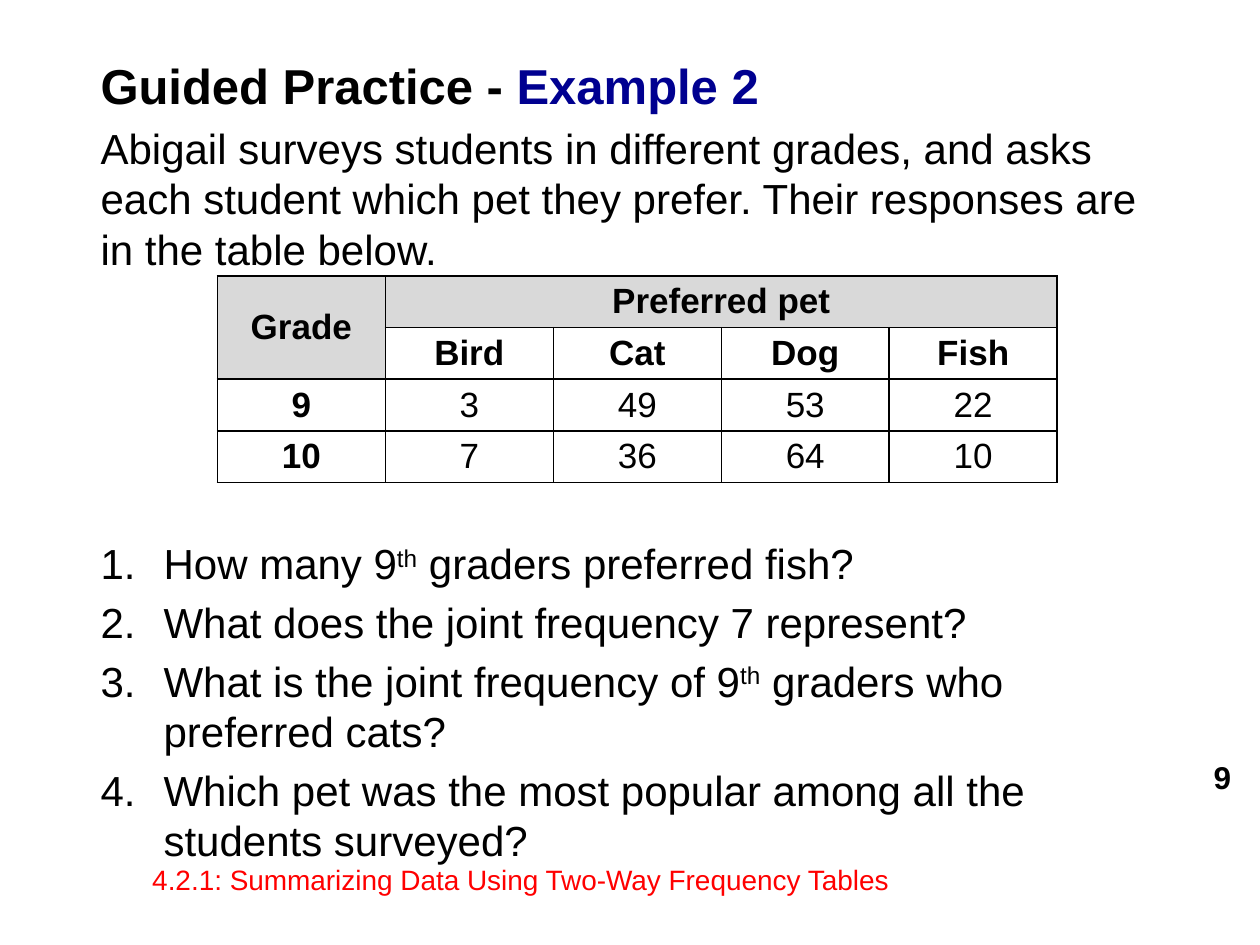
import pptx
import pptx.util
import pptx.dml.color
import pptx.enum.text
from pptx.oxml.ns import qn
from lxml import etree

Inches, Pt = pptx.util.Inches, pptx.util.Pt
ALIGN, ANCHOR = pptx.enum.text.PP_ALIGN, pptx.enum.text.MSO_ANCHOR
WIDE, HIGH = Inches(10), Inches(7.5)
BLACK, BLUE, RED, GRAY, WHITE = "000000", "000090", "FF0000", "D9D9D9", "FFFFFF"

HEADS = ["Bird", "Cat", "Dog", "Fish"]
ROWS = [["9", "3", "49", "53", "22"], ["10", "7", "36", "64", "10"]]
# A caret marks the start and end of raised text
ASKS = [
    "How many 9^th^ graders preferred fish?",
    "What does the joint frequency 7 represent?",
    "What is the joint frequency of 9^th^ graders who preferred cats?",
    "Which pet was the most popular among all the students surveyed?",
]


def rgb(code):
    return pptx.dml.color.RGBColor.from_string(code)


def area(left, top, width, height):
    """Turn percentages of the slide into a box."""
    return [int(share * side / 100) for share, side in
            zip((left, top, width, height), (WIDE, HIGH, WIDE, HIGH))]


def style(para, size, color=BLACK, bold=False):
    font = para.font
    font.name, font.size, font.bold = "Arial", Pt(size), bold
    font.color.rgb = rgb(color)


def frame(slide, box, anchor=ANCHOR.TOP):
    text = slide.shapes.add_textbox(*box).text_frame
    text.word_wrap = True
    text.vertical_anchor = anchor
    return text


def intro(slide, box):
    text = frame(slide, box)
    head = text.paragraphs[0]
    head.add_run().text = "Guided Practice - "
    mark = head.add_run()
    mark.text = "Example 2"
    style(head, 28, bold=True)
    mark.font.color.rgb = rgb(BLUE)
    body = text.add_paragraph()
    body.text = ("Abigail surveys students in different grades, and asks each student "
                 "which pet they prefer. Their responses are in the table below.")
    body.space_before = Pt(4.8)
    style(body, 24)


def border(cell):
    props = cell._tc.get_or_add_tcPr()
    for spot, side in enumerate(("lnL", "lnR", "lnT", "lnB")):
        line = etree.Element(qn("a:" + side), w=str(Pt(1)))
        fill = etree.SubElement(line, qn("a:solidFill"))
        etree.SubElement(fill, qn("a:srgbClr"), val=BLACK)
        props.insert(spot, line)


def survey(slide, box):
    grid = [["Grade", "Preferred pet", "", "", ""], [""] + HEADS] + ROWS
    table = slide.shapes.add_table(len(grid), len(grid[0]), *box).table
    for r, row in enumerate(grid):
        for c, word in enumerate(row):
            cell = table.cell(r, c)
            cell.vertical_anchor = ANCHOR.MIDDLE
            cell.margin_top = cell.margin_bottom = Inches(0.03)
            cell.fill.solid()
            cell.fill.fore_color.rgb = rgb(GRAY if r == 0 or (r, c) == (1, 0) else WHITE)
            border(cell)
            para = cell.text_frame.paragraphs[0]
            if word:
                para.text = word
            para.alignment = ALIGN.CENTER
            style(para, 20, bold=r < 2 or c == 0)
    table.cell(0, 0).merge(table.cell(1, 0))
    table.cell(0, 1).merge(table.cell(0, 4))


def quiz(slide, box):
    text = frame(slide, box)
    for i, ask in enumerate(ASKS):
        para = text.add_paragraph() if i else text.paragraphs[0]
        if i:
            para.space_before = Pt(4.8)
        # Hanging number
        props = para._p.get_or_add_pPr()
        props.set("marL", str(Inches(0.5)))
        props.set("indent", str(-Inches(0.5)))
        etree.SubElement(props, qn("a:buFont"), typeface="+mj-lt")
        etree.SubElement(props, qn("a:buAutoNum"), type="arabicPeriod")
        style(para, 24)
        for j, part in enumerate(ask.split("^")):
            run = para.add_run()
            run.text = part
            if j % 2:
                run.font._element.set("baseline", "30000")


def label(slide, box, words, size, color=BLACK, bold=False, align=ALIGN.LEFT):
    para = frame(slide, box, ANCHOR.MIDDLE).paragraphs[0]
    para.text = words
    para.alignment = align
    style(para, size, color, bold)


def main():
    deck = pptx.Presentation()
    deck.slide_width, deck.slide_height = WIDE, HIGH
    slide = deck.slides.add_slide(deck.slide_layouts[6])
    intro(slide, area(7, 5.17, 85.9, 24))
    quiz(slide, area(7, 56.25, 85.9, 34.5))
    label(slide, area(90.7, 80.13, 8, 4.13), "9", 18, bold=True, align=ALIGN.RIGHT)
    label(slide, area(11.1, 91.07, 60.9, 3.87),
          "4.2.1: Summarizing Data Using Two-Way Frequency Tables", 16, RED)
    survey(slide, area(17.25, 29.2, 66.67, 21.87))
    deck.save("out.pptx")


if __name__ == "__main__":
    main()
